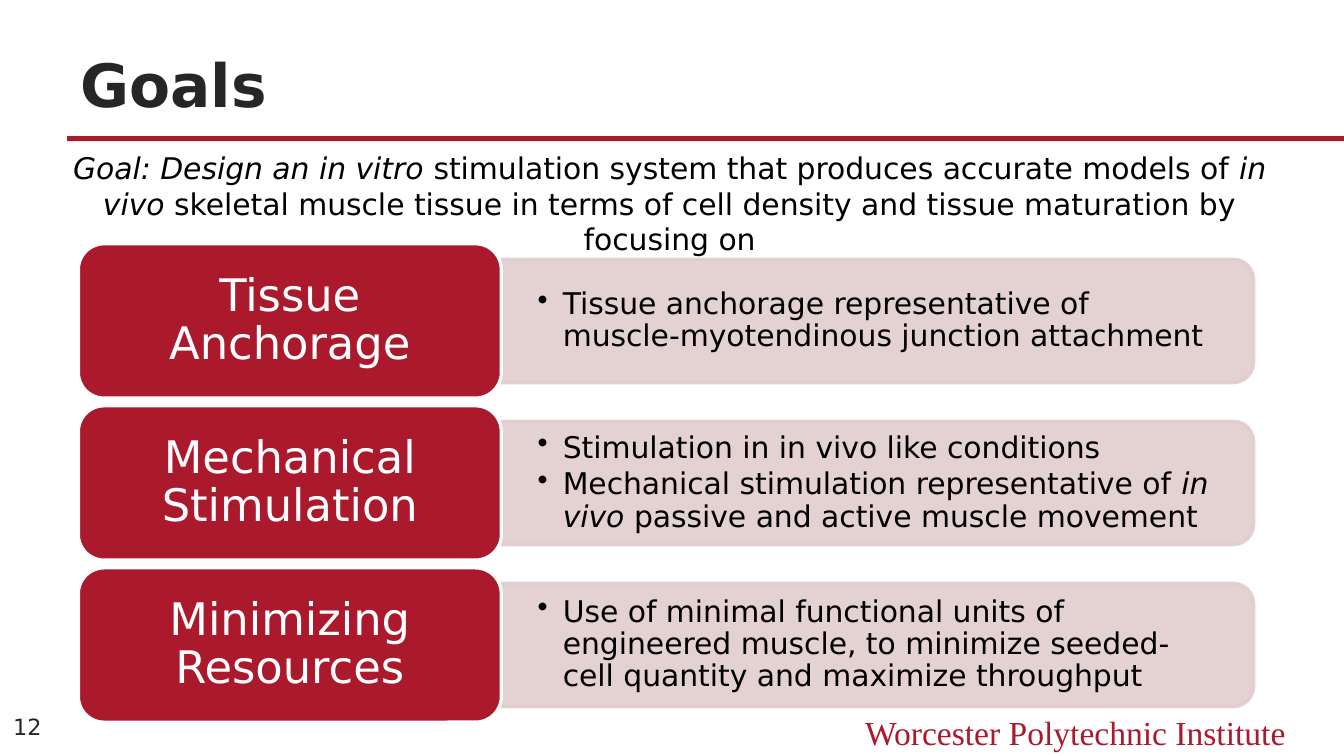
from lxml import etree
from pptx import Presentation
from pptx.dml.color import RGBColor
from pptx.enum.shapes import MSO_SHAPE
from pptx.enum.text import MSO_ANCHOR, PP_ALIGN
from pptx.oxml.ns import qn
from pptx.util import Pt

RECT, ROUNDED, ROUNDED_END = MSO_SHAPE.RECTANGLE, MSO_SHAPE.ROUNDED_RECTANGLE, MSO_SHAPE.ROUND_2_SAME_RECTANGLE
TOP, MIDDLE, BOTTOM = MSO_ANCHOR.TOP, MSO_ANCHOR.MIDDLE, MSO_ANCHOR.BOTTOM
LEFT, CENTER, RIGHT = PP_ALIGN.LEFT, PP_ALIGN.CENTER, PP_ALIGN.RIGHT

TITLE = "Goals"
INSTITUTE = "Worcester Polytechnic Institute"
PAGE = "12"
STATEMENT = [
    ("Goal: Design an in vitro", True),
    (" stimulation system that produces accurate models of ", False),
    ("in vivo ", True),
    ("skeletal muscle tissue in terms of cell density and tissue maturation by focusing on", False),
]
GOALS = [
    ("Tissue Anchorage", [
        [("Tissue anchorage representative of muscle-myotendinous junction attachment", False)],
    ]),
    ("Mechanical Stimulation", [
        [("Stimulation in in vivo like conditions", False)],
        [("Mechanical stimulation representative of ", False), ("in vivo ", True),
         ("passive and active muscle movement", False)],
    ]),
    ("Minimizing Resources", [
        [("Use of minimal functional units of engineered muscle, "
          "to minimize seeded-cell quantity and maximize throughput", False)],
    ]),
]

THEME = {
    "sans": "DejaVu Sans", "serif": "Times New Roman",
    "red": RGBColor(0xAB, 0x19, 0x2D), "pink": RGBColor(0xE2, 0xCC, 0xCD),
    "ink": RGBColor(0x26, 0x26, 0x26), "black": RGBColor(0, 0, 0), "white": RGBColor(255, 255, 255),
    "title": 32, "label": 24, "institute": 18, "body": 16, "page": 12,
    "outline": 1.75, "band_opacity": 90,
}

LABEL_LEFT, LABEL_WIDTH, LABEL_HEIGHT = 42, 226.6, 82.7
FIRST_TOP, ROW_PITCH = 130.6, 86.8
BAND_WIDTH, BAND_HEIGHT = 403, 66.2
DETAIL_WIDTH, DETAIL_HEIGHT = 400, 59.8
BULLET_INDENT = 13.5


def style(paragraph, size, color, face="sans", align=LEFT, bold=None):
    paragraph.alignment = align
    paragraph.font.name = THEME[face]
    paragraph.font.size = Pt(THEME[size])
    paragraph.font.color.rgb = THEME[color]
    paragraph.font.bold = bold


def add_runs(paragraph, pieces):
    for words, italic in pieces:
        run = paragraph.add_run()
        run.text = words
        run.font.italic = italic


def add_bullet(paragraph):
    properties = paragraph._p.get_or_add_pPr()
    properties.set("marL", str(Pt(BULLET_INDENT)))
    properties.set("indent", str(-Pt(BULLET_INDENT)))
    etree.SubElement(properties, qn("a:buChar")).set("char", "•")


def add_text_box(slide, left, top, width, height, anchor=TOP):
    frame = slide.shapes.add_textbox(Pt(left), Pt(top), Pt(width), Pt(height)).text_frame
    frame.word_wrap = True
    frame.vertical_anchor = anchor
    return frame


def add_block(slide, preset, left, top, width, height, fill, line=None):
    block = slide.shapes.add_shape(preset, Pt(left), Pt(top), Pt(width), Pt(height))
    block.shadow.inherit = False
    block.fill.solid()
    block.fill.fore_color.rgb = THEME[fill]
    if line:
        block.line.color.rgb = THEME[line]
        block.line.width = Pt(THEME["outline"])
    else:
        block.line.fill.background()
    return block


def add_line_of_text(slide, words, bounds, anchor, *look, **options):
    paragraph = add_text_box(slide, *bounds, anchor).paragraphs[0]
    paragraph.text = words
    style(paragraph, *look, **options)


def add_goal(slide, row, label, details):
    top = FIRST_TOP + row * ROW_PITCH
    middle = top + LABEL_HEIGHT / 2
    right = LABEL_LEFT + LABEL_WIDTH

    band = add_block(slide, ROUNDED_END, right + (BAND_WIDTH - BAND_HEIGHT) / 2, middle - BAND_WIDTH / 2,
                     BAND_HEIGHT, BAND_WIDTH, "pink", "pink")
    band.rotation = 90
    for color in band._element.spPr.iter(qn("a:srgbClr")):
        etree.SubElement(color, qn("a:alpha")).set("val", str(THEME["band_opacity"] * 1000))

    frame = add_text_box(slide, right, middle - DETAIL_HEIGHT / 2, DETAIL_WIDTH, DETAIL_HEIGHT, MIDDLE)
    frame.margin_left = frame.margin_right = Pt(19.4)
    frame.margin_top = frame.margin_bottom = Pt(10)
    for index, pieces in enumerate(details):
        paragraph = frame.add_paragraph() if index else frame.paragraphs[0]
        add_bullet(paragraph)
        paragraph.line_spacing = 0.9
        paragraph.space_after = Pt(2.4)
        add_runs(paragraph, pieces)
        style(paragraph, "body", "black")

    heading = add_block(slide, ROUNDED, LABEL_LEFT, top, LABEL_WIDTH, LABEL_HEIGHT, "red", "white").text_frame
    heading.word_wrap = True
    heading.vertical_anchor = MIDDLE
    heading.text = label
    heading.paragraphs[0].line_spacing = 0.9
    style(heading.paragraphs[0], "label", "white", align=CENTER)


def main():
    deck = Presentation()
    deck.slide_width, deck.slide_height = Pt(720), Pt(405)
    slide = deck.slides.add_slide(deck.slide_layouts[6])

    add_block(slide, RECT, 36, 73, 684, 2.6, "red")
    add_line_of_text(slide, INSTITUTE, (432, 378, 264, 29), TOP, "institute", "red", face="serif", align=RIGHT)
    add_line_of_text(slide, TITLE, (36, 20, 648, 47.5), BOTTOM, "title", "ink", bold=True)
    add_line_of_text(slide, PAGE, (0, 377.5, 36, 23), MIDDLE, "page", "ink")

    for row, (label, details) in enumerate(GOALS):
        add_goal(slide, row, label, details)

    statement = add_text_box(slide, 31.9, 76.5, 653.8, 40).paragraphs[0]
    add_runs(statement, STATEMENT)
    style(statement, "body", "black", align=CENTER)

    deck.save("out.pptx")


if __name__ == "__main__":
    main()
